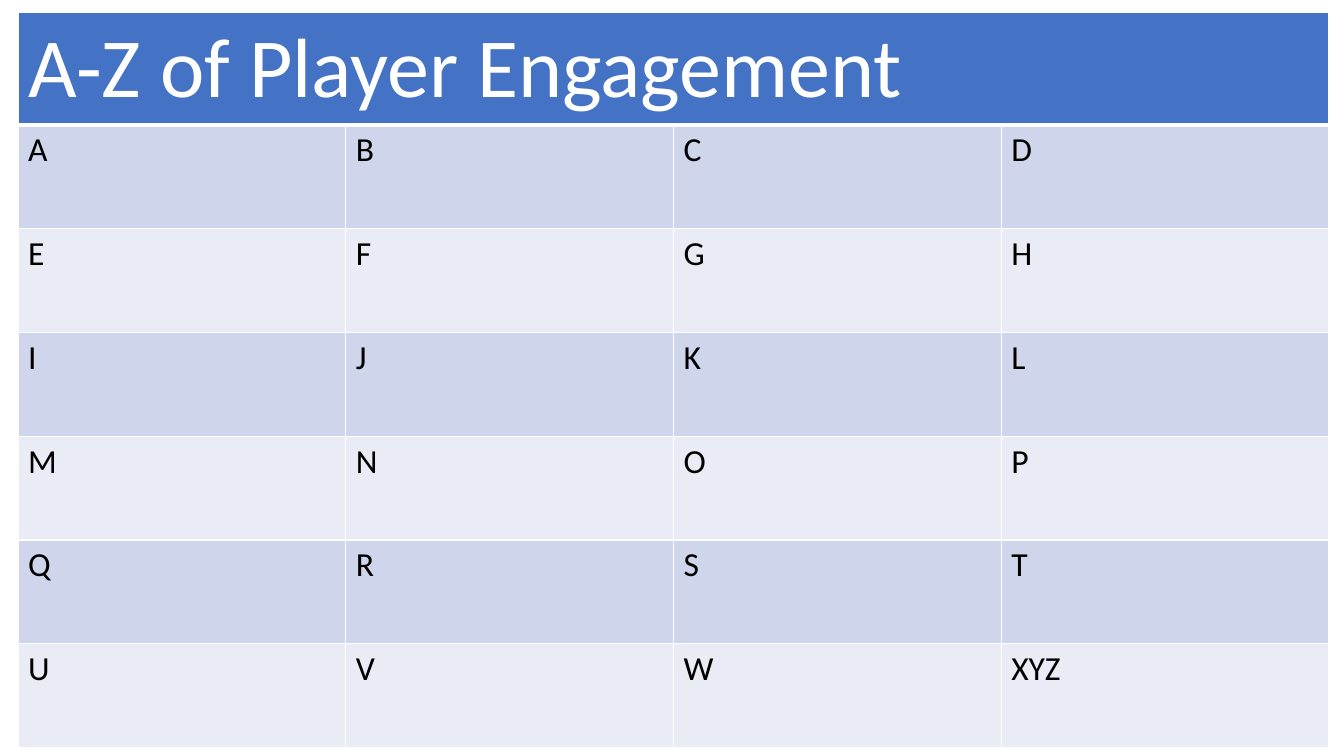
from dataclasses import dataclass
from lxml.etree import SubElement
from pptx import Presentation
from pptx.dml.color import RGBColor
from pptx.oxml.ns import qn
from pptx.util import Inches, Pt


@dataclass(frozen=True)
class Theme:
    font: str = "Calibri"
    heading_size: int = 60
    letter_size: int = 24
    white: str = "FFFFFF"
    black: str = "000000"
    heading_fill: str = "4472C4"
    bands: tuple = ("CFD5EA", "E9EBF5")
    rule: int = 1
    heading_rule: int = 3


theme = Theme()


def write_cell(cell, text, *, size, color, fill, bottom=theme.rule):
    """Write a cell's text and give it its fill and white borders."""
    properties = cell._tc.get_or_add_tcPr()
    for side in ("lnL", "lnR", "lnT", "lnB"):
        width = bottom if side == "lnB" else theme.rule
        border = SubElement(properties, qn(f"a:{side}"), w=str(Pt(width)))
        paint = SubElement(border, qn("a:solidFill"))
        SubElement(paint, qn("a:srgbClr"), val=theme.white)
    cell.fill.solid()
    cell.fill.fore_color.rgb = RGBColor.from_string(fill)
    cell.text = text
    font = cell.text_frame.paragraphs[0].runs[0].font
    font.name = theme.font
    font.size = Pt(size)
    font.bold = False
    font.color.rgb = RGBColor.from_string(color)


# Slide
deck = Presentation()
deck.slide_width, deck.slide_height = Inches(13.33), Inches(7.5)
slide = deck.slides.add_slide(deck.slide_layouts[6])

# Grid: one heading row above rows of four letters
letters = [*"ABCDEFGHIJKLMNOPQRSTUVW", "XYZ"]
columns = 4
letter_rows = len(letters) // columns
column_width = Inches(3.25)
heading_height, letter_height = Inches(1.11), Inches(1.03)
alphabet = slide.shapes.add_table(
    letter_rows + 1, columns, Inches(0.18), Inches(0.12),
    column_width * columns, heading_height + letter_height * letter_rows,
).table
for column in alphabet.columns:
    column.width = column_width
for row in alphabet.rows:
    row.height = letter_height
alphabet.rows[0].height = heading_height

# Heading across all columns
heading = alphabet.cell(0, 0)
heading.merge(alphabet.cell(0, columns - 1))
write_cell(heading, "A-Z of Player Engagement", size=theme.heading_size,
           color=theme.white, fill=theme.heading_fill, bottom=theme.heading_rule)

# Letters in alternating bands
for index, letter in enumerate(letters):
    band, position = divmod(index, columns)
    write_cell(alphabet.cell(band + 1, position), letter, size=theme.letter_size,
               color=theme.black, fill=theme.bands[band % 2])

deck.save("out.pptx")
